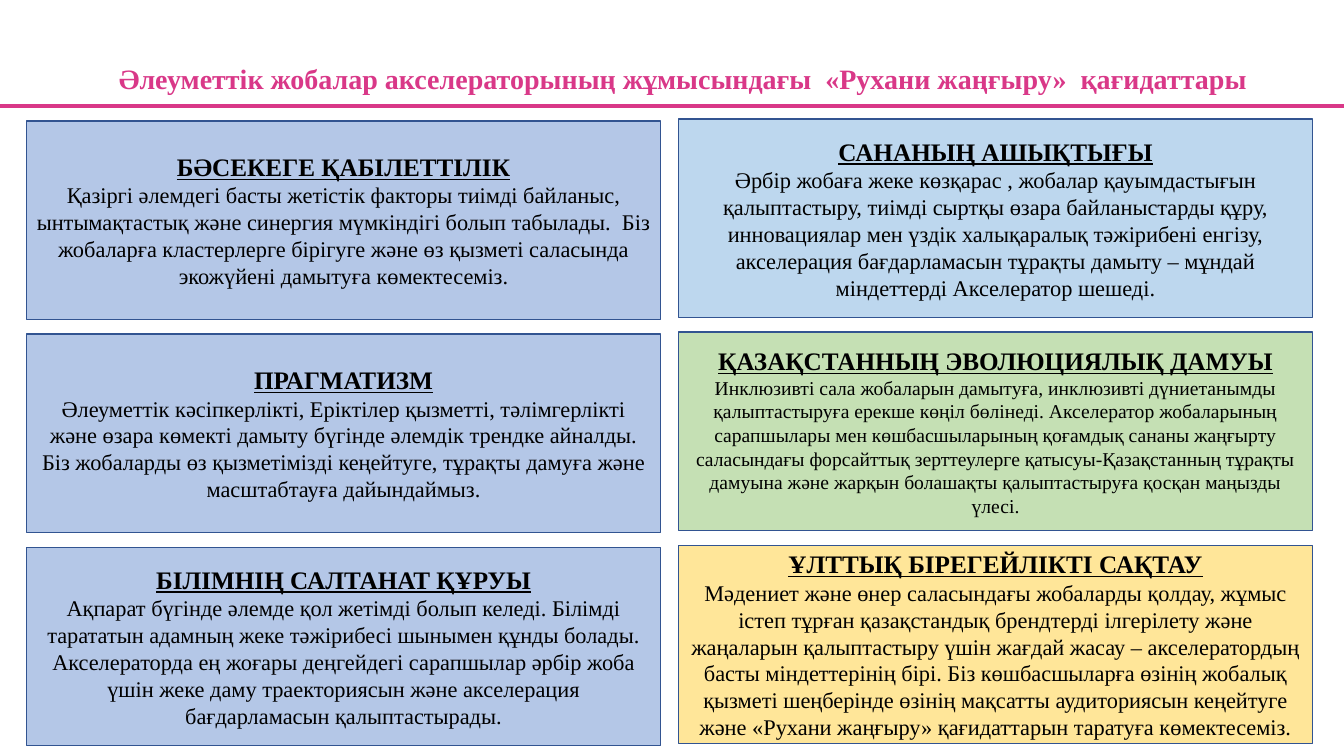
from lxml.etree import SubElement
from pptx import Presentation
from pptx.dml.color import RGBColor
from pptx.enum.shapes import MSO_CONNECTOR as Connector, MSO_SHAPE as Shape
from pptx.enum.text import MSO_ANCHOR as Anchor, PP_ALIGN as Align
from pptx.oxml.ns import qn
from pptx.util import Cm, Pt

PAGE_WIDTH, PAGE_HEIGHT = 33.87, 19.05
CARD_WIDTH, CARD_HEIGHT = 15.98, 5
FIRST_LEFT, FIRST_TOP = 0.67, 3.05
COLUMN_STEP, ROW_STEP = 16.43, 5.37
RIGHT_COLUMN_LIFT = 0.05

TITLE = "Әлеуметтік жобалар акселераторының жұмысындағы  «Рухани жаңғыру»  қағидаттары"

COLUMNS = [
    [
        ("БӘСЕКЕГЕ ҚАБІЛЕТТІЛІК",
         "Қазіргі әлемдегі басты жетістік факторы тиімді байланыс, ынтымақтастық және "
         "синергия мүмкіндігі болып табылады.  Біз жобаларға кластерлерге бірігуге және "
         "өз қызметі саласында экожүйені дамытуға көмектесеміз.",
         "B4C7E7", 16),
        ("ПРАГМАТИЗМ",
         "Әлеуметтік кәсіпкерлікті, Еріктілер қызметті, тәлімгерлікті және өзара көмекті "
         "дамыту бүгінде әлемдік трендке айналды. Біз жобаларды өз қызметімізді "
         "кеңейтуге, тұрақты дамуға және масштабтауға дайындаймыз.",
         "B4C7E7", 16),
        ("БІЛІМНІҢ САЛТАНАТ ҚҰРУЫ",
         "Ақпарат бүгінде әлемде қол жетімді болып келеді. Білімді тарататын адамның жеке "
         "тәжірибесі шынымен құнды болады. Акселераторда ең жоғары деңгейдегі сарапшылар "
         "әрбір жоба үшін жеке даму траекториясын және акселерация бағдарламасын "
         "қалыптастырады.",
         "B4C7E7", 16),
    ],
    [
        ("САНАНЫҢ АШЫҚТЫҒЫ",
         "Әрбір жобаға жеке көзқарас , жобалар қауымдастығын қалыптастыру, тиімді сыртқы "
         "өзара байланыстарды құру, инновациялар мен үздік халықаралық тәжірибені енгізу, "
         "акселерация бағдарламасын тұрақты дамыту – мұндай міндеттерді Акселератор шешеді.",
         "BDD7EE", 16),
        ("ҚАЗАҚСТАННЫҢ ЭВОЛЮЦИЯЛЫҚ ДАМУЫ",
         "Инклюзивті сала жобаларын дамытуға, инклюзивті дүниетанымды қалыптастыруға ерекше "
         "көңіл бөлінеді. Акселератор жобаларының сарапшылары мен көшбасшыларының қоғамдық "
         "сананы жаңғырту саласындағы форсайттық зерттеулерге қатысуы-Қазақстанның тұрақты "
         "дамуына және жарқын болашақты қалыптастыруға қосқан маңызды үлесі.",
         "C5E0B4", 14),
        ("ҰЛТТЫҚ БІРЕГЕЙЛІКТІ САҚТАУ",
         "Мәдениет және өнер саласындағы жобаларды қолдау, жұмыс істеп тұрған қазақстандық "
         "брендтерді ілгерілету және жаңаларын қалыптастыру үшін жағдай жасау – "
         "акселератордың басты міндеттерінің бірі. Біз көшбасшыларға өзінің жобалық қызметі "
         "шеңберінде өзінің мақсатты аудиториясын кеңейтуге және «Рухани жаңғыру» "
         "қағидаттарын таратуға көмектесеміз.",
         "FFE699", 16),
    ],
]


def color(value):
    return RGBColor.from_string(value)


class PrinciplesSlide:
    font = "Times New Roman"
    ink = "000000"
    accent = "D93888"
    border = "325491"

    def __init__(self, deck):
        self.page = deck.slides.add_slide(deck.slide_layouts[6])

    def fill_para(self, para, text, size, ink, bold=False, underline=False):
        para.text = text
        para.alignment = Align.CENTER
        para.font.name = self.font
        para.font.size = Pt(size)
        para.font.bold = bold
        para.font.underline = underline
        para.font.color.rgb = color(ink)

    def title(self, text, left, top, width, height):
        box = self.page.shapes.add_textbox(Cm(left), Cm(top), Cm(width), Cm(height))
        frame = box.text_frame
        frame.word_wrap = True
        frame.vertical_anchor = Anchor.MIDDLE
        para = frame.paragraphs[0]
        para.line_spacing = 0.9
        self.fill_para(para, text, 20, self.accent, bold=True)

    def rule(self, top):
        line = self.page.shapes.add_connector(
            Connector.STRAIGHT, Cm(0), Cm(top), Cm(PAGE_WIDTH), Cm(top))
        line.line.color.rgb = color(self.accent)
        line.line.width = Pt(3)
        SubElement(line._element.spPr, qn("a:effectLst"))

    def card(self, left, top, heading, body, fill, body_size):
        box = self.page.shapes.add_shape(
            Shape.RECTANGLE, Cm(left), Cm(top), Cm(CARD_WIDTH), Cm(CARD_HEIGHT))
        box.shadow.inherit = False
        box.fill.solid()
        box.fill.fore_color.rgb = color(fill)
        box.line.color.rgb = color(self.border)
        box.line.width = Pt(1)
        frame = box.text_frame
        frame.word_wrap = True
        frame.vertical_anchor = Anchor.MIDDLE
        self.fill_para(frame.paragraphs[0], heading, 18, self.ink, bold=True, underline=True)
        self.fill_para(frame.add_paragraph(), body, body_size, self.ink)


def main():
    deck = Presentation()
    deck.slide_width, deck.slide_height = Cm(PAGE_WIDTH), Cm(PAGE_HEIGHT)
    slide = PrinciplesSlide(deck)
    for column, cards in enumerate(COLUMNS):
        for row, card in enumerate(cards):
            left = FIRST_LEFT + column * COLUMN_STEP
            top = FIRST_TOP + row * ROW_STEP - column * RIGHT_COLUMN_LIFT
            slide.card(left, top, *card)
    slide.title(TITLE, 0.91, 1.12, 32.61, 1.8)
    slide.rule(2.67)
    deck.save("out.pptx")


if __name__ == "__main__":
    main()
